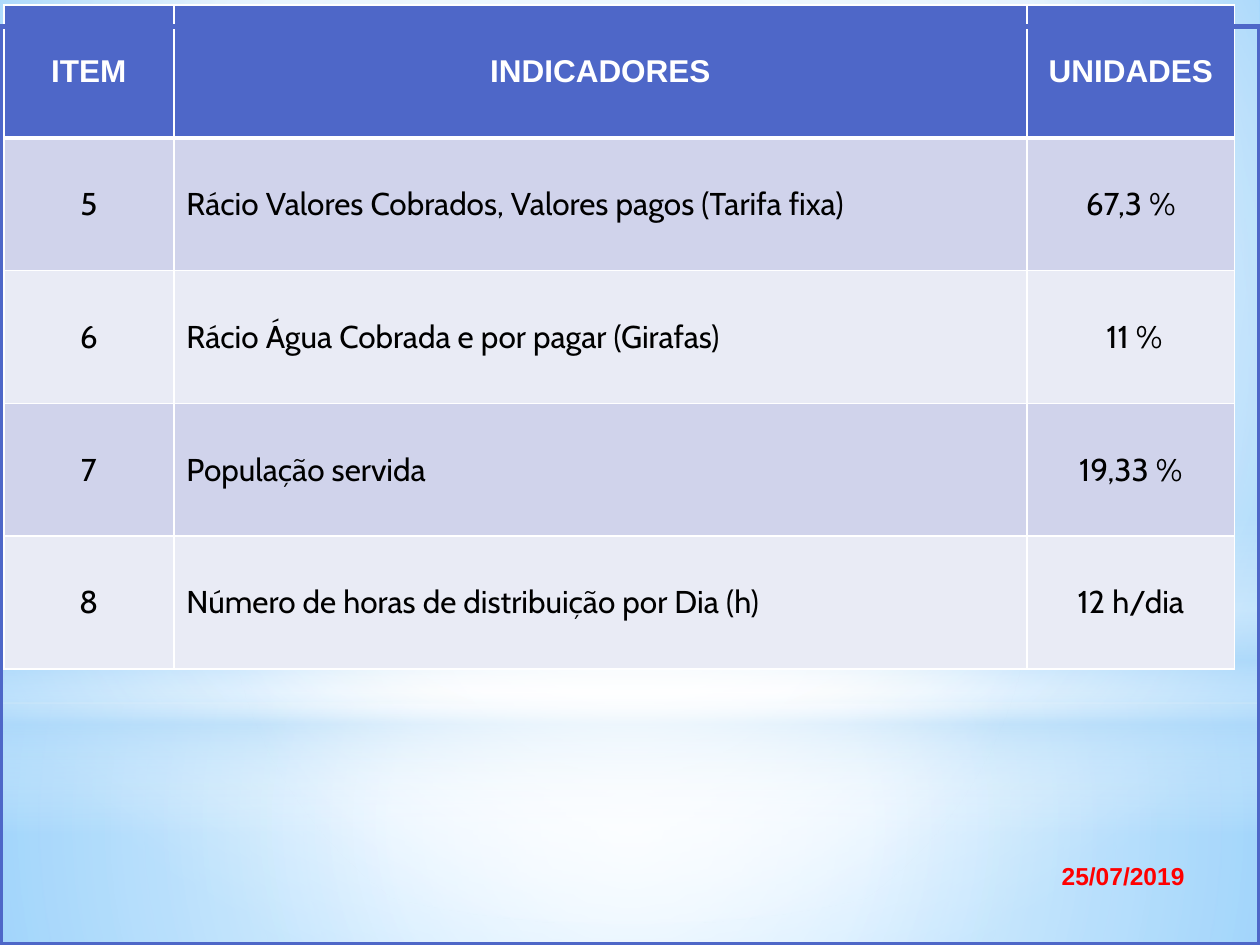
from lxml import etree
from pptx import Presentation
from pptx.dml.color import RGBColor
from pptx.enum.shapes import MSO_SHAPE as Shape
from pptx.enum.text import MSO_ANCHOR as Anchor, PP_ALIGN as Align
from pptx.oxml.ns import qn
from pptx.util import Inches, Pt

COLORS = {
    "accent": "4E67C8", "white": "FFFFFF", "text": "000000", "date": "FF0000",
    "odd_row": "D0D3EB", "even_row": "E9EBF5",
    "sky": "9ED5FF", "deep_sky": "5BB9FF", "haze": "B4DCFA",
}
CENTER = (50, 50, 50, 50)

# shape, (left, top, width, height), (position, colour, opacity) stops, focus
GLOWS = [
    (Shape.RECTANGLE, (0, 5.58, 10, 1.92),
     [(0, "white", 91), (37, "white", 76), (100, "haze", 79)], CENTER),
    (Shape.RECTANGLE, (0, 0, 10, 5.58),
     [(0, "white", 89), (48, "white", 62), (100, "haze", 79)], CENTER),
    (Shape.RECTANGLE, (0, 4.12, 10, 2.5),
     [(0, "white", 0), (29, "white", 30), (45, "haze", 40),
      (55, "white", 26), (65, "haze", 60), (100, "white", 0)], None),
    (Shape.OVAL, (0, 1.75, 10, 5.58),
     [(0, "white", 100), (56, "white", 0)], CENTER),
]

ROWS = [
    ("ITEM", "INDICADORES", "UNIDADES"),
    ("5", "Rácio Valores Cobrados, Valores pagos (Tarifa fixa)", "67,3 %"),
    ("6", "Rácio Água Cobrada e por pagar (Girafas)", " 11 %"),
    ("7", "População servida", "19,33 %"),
    ("8", "Número de horas de distribuição por Dia (h)", "12 h/dia"),
]
COLUMN_WIDTHS = (1.35, 6.77, 1.65)


def rgb(name):
    return RGBColor.from_string(COLORS[name])


def add_child(parent, tag, **attributes):
    child = etree.SubElement(parent, qn(tag))
    for key, value in attributes.items():
        child.set(key, str(value))
    return child


def set_gradient(fill, owner, stops, focus):
    """Fill with a circular gradient around focus, or a vertical one without it."""
    fill.gradient()
    gradient = next(owner.iter(qn("a:gradFill")))
    for child in list(gradient):
        gradient.remove(child)
    stop_list = add_child(gradient, "a:gsLst")
    for position, color, opacity in stops:
        stop = add_child(stop_list, "a:gs", pos=position * 1000)
        stop_color = add_child(stop, "a:srgbClr", val=COLORS[color])
        if opacity < 100:
            add_child(stop_color, "a:alpha", val=opacity * 1000)
    if focus:
        circle = add_child(gradient, "a:path", path="circle")
        edges = {side: edge * 1000 for side, edge in zip("ltrb", focus)}
        add_child(circle, "a:fillToRect", **edges)
    else:
        add_child(gradient, "a:lin", ang=90 * 60000, scaled=0)


def add_plain_shape(slide, kind, box):
    shape = slide.shapes.add_shape(kind, *map(Inches, box))
    shape.shadow.inherit = False
    return shape


def add_backdrop(slide):
    set_gradient(slide.background.fill, slide.element,
                 [(0, "sky", 100), (60, "white", 100), (100, "deep_sky", 100)],
                 (20, 10, 20, 60))
    for kind, box, stops, focus in GLOWS:
        glow = add_plain_shape(slide, kind, box)
        glow.line.fill.background()
        set_gradient(glow.fill, glow.element, stops, focus)


def format_paragraph(paragraph, font_name, size, color, bold, align):
    paragraph.alignment = align
    font = paragraph.font if not paragraph.runs else paragraph.runs[0].font
    font.name, font.size, font.bold = font_name, Pt(size), bold
    font.color.rgb = rgb(color)


def set_borders(cell, bottom_width):
    properties = cell._tc.get_or_add_tcPr()
    for side, width in zip("LRTB", (1, 1, 1, bottom_width)):
        border = add_child(properties, f"a:ln{side}", w=Pt(width))
        add_child(add_child(border, "a:solidFill"), "a:srgbClr", val=COLORS["white"])


def add_indicator_table(slide):
    table = slide.shapes.add_table(
        len(ROWS), len(COLUMN_WIDTHS), Inches(0.03), Inches(0.04),
        Inches(sum(COLUMN_WIDTHS)), Inches(5.27)).table
    for column, width in zip(table.columns, COLUMN_WIDTHS):
        column.width = Inches(width)
    for r, row in enumerate(ROWS):
        header = r == 0
        row_color = "accent" if header else "odd_row" if r % 2 else "even_row"
        for c, content in enumerate(row):
            cell = table.cell(r, c)
            set_borders(cell, 3 if header else 1)
            cell.fill.solid()
            cell.fill.fore_color.rgb = rgb(row_color)
            cell.vertical_anchor = Anchor.MIDDLE
            cell.text_frame.text = content
            format_paragraph(cell.text_frame.paragraphs[0],
                             "Arial" if header else "Cabin", 18,
                             "white" if header else "text", header,
                             Align.LEFT if c == 1 and not header else Align.CENTER)


def add_frame(slide):
    frame = add_plain_shape(slide, Shape.RECTANGLE, (0, 0.21, 10, 7.29))
    frame.fill.background()
    frame.line.color.rgb = rgb("accent")
    frame.line.width = Pt(3)


def add_date(slide):
    date = slide.shapes.add_textbox(*map(Inches, (6.75, 6.75, 2.75, 0.4))).text_frame
    date.word_wrap = True
    date.vertical_anchor = Anchor.MIDDLE
    date.text = "25/07/2019"
    format_paragraph(date.paragraphs[0], "Arial", 14, "date", True, Align.RIGHT)


def main():
    presentation = Presentation()
    presentation.slide_width, presentation.slide_height = Inches(10), Inches(7.5)
    slide = presentation.slides.add_slide(presentation.slide_layouts[6])
    add_backdrop(slide)
    add_indicator_table(slide)
    add_frame(slide)
    add_date(slide)
    presentation.save("out.pptx")


if __name__ == "__main__":
    main()
